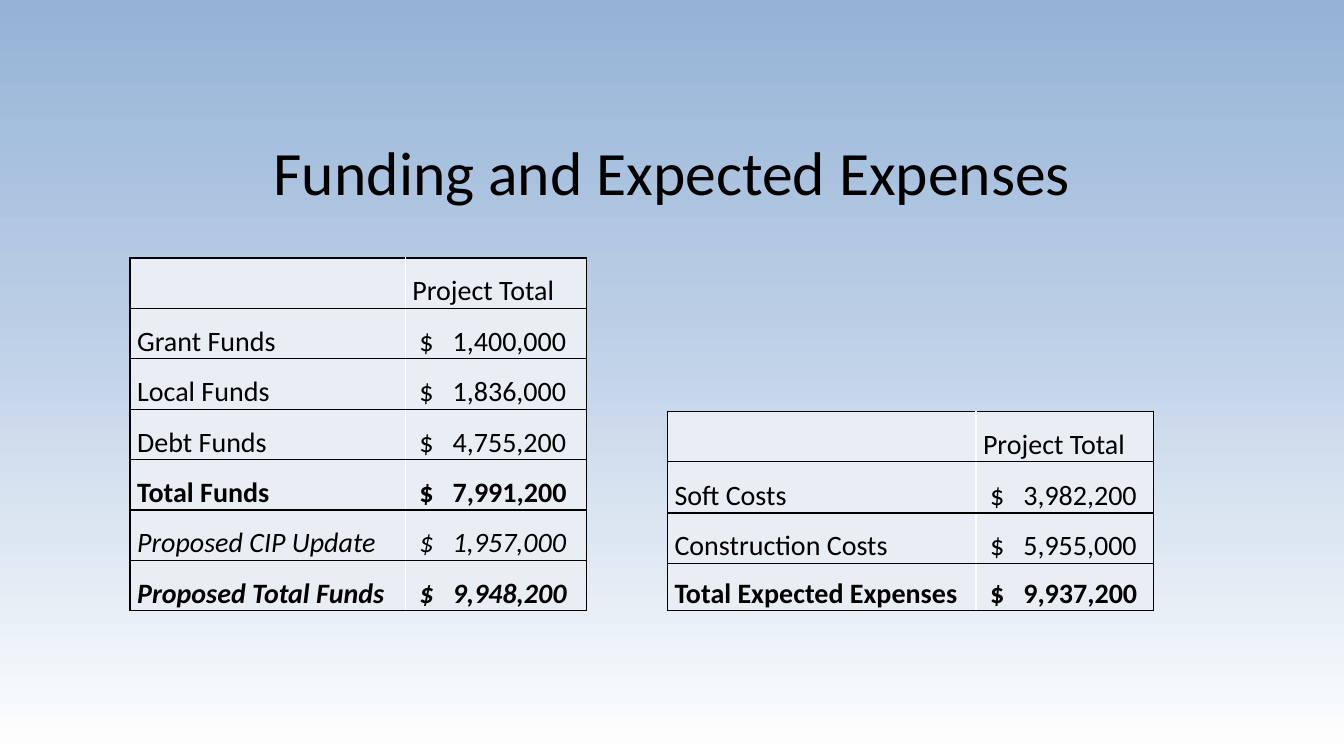
from dataclasses import dataclass

from lxml import etree
from pptx import Presentation
from pptx.dml.color import RGBColor
from pptx.enum.text import MSO_ANCHOR, PP_ALIGN
from pptx.oxml.ns import qn
from pptx.util import Inches, Pt

MIDDLE, BOTTOM = MSO_ANCHOR.MIDDLE, MSO_ANCHOR.BOTTOM
CENTER = PP_ALIGN.CENTER
FONT = "Calibri"
COLORS = {"text": "000000", "outline": "000000", "divider": "FFFFFF", "cell": "E9EDF4"}
SKY = [(0, "95B3D7"), (40, "B9CDE5"), (70, "DCE6F2"), (100, "FFFFFF")]


@dataclass(frozen=True)
class BudgetRow:
    label: str
    amount: str
    height: float = 0.5
    bold: bool = False
    italic: bool = False


@dataclass(frozen=True)
class BudgetTable:
    left: float
    top: float
    label_width: float
    amount_width: float
    rows: tuple[BudgetRow, ...]


HEADER = BudgetRow("", "Project Total")
FUNDING = BudgetTable(1.29, 2.56, 2.73, 1.8, (
    HEADER,
    BudgetRow("Grant Funds", "1,400,000"),
    BudgetRow("Local Funds", "1,836,000"),
    BudgetRow("Debt Funds", "4,755,200"),
    BudgetRow("Total Funds", "7,991,200", bold=True),
    BudgetRow("Proposed CIP Update", "1,957,000", italic=True),
    BudgetRow("Proposed Total Funds", "9,948,200", bold=True, italic=True),
))
EXPENSES = BudgetTable(6.62, 4.08, 3.06, 1.76, (
    HEADER,
    BudgetRow("Soft Costs", "3,982,200", height=0.51),
    BudgetRow("Construction Costs", "5,955,000"),
    BudgetRow("Total Expected Expenses", "9,937,200", height=0.47, bold=True),
))


def paint_background(slide) -> None:
    fill = slide.background.fill
    fill.gradient()
    fill.gradient_angle = 270
    stops = next(slide.element.iter(qn("a:gsLst")))
    for stop in list(stops):
        stops.remove(stop)
    for percent, color in SKY:
        stop = etree.SubElement(stops, qn("a:gs"), pos=str(percent * 1000))
        etree.SubElement(stop, qn("a:srgbClr"), val=color)


def set_font(paragraph, size: int, bold: bool = False, italic: bool = False) -> None:
    font = paragraph.font
    font.name, font.size, font.bold, font.italic = FONT, Pt(size), bold, italic
    font.color.rgb = RGBColor.from_string(COLORS["text"])


def add_title(slide, title: str) -> None:
    box = slide.shapes.add_textbox(Inches(0.67), Inches(1.07), Inches(12), Inches(1.25))
    frame = box.text_frame
    frame.word_wrap = True
    frame.vertical_anchor = MIDDLE
    paragraph = frame.paragraphs[0]
    paragraph.text = title
    paragraph.alignment = CENTER
    set_font(paragraph, 44)


def add_borders(cell, divider_side: str) -> None:
    """Outline a cell, with the divider colour on the side between the columns."""
    properties = cell._tc.get_or_add_tcPr()
    for side in ("L", "R", "T", "B"):
        line = etree.SubElement(properties, qn(f"a:ln{side}"), w=str(Pt(1)))
        solid = etree.SubElement(line, qn("a:solidFill"))
        color = COLORS["divider" if side == divider_side else "outline"]
        etree.SubElement(solid, qn("a:srgbClr"), val=color)


def fill_cell(cell, text: str, indent: float, divider_side: str, row: BudgetRow) -> None:
    add_borders(cell, divider_side)
    cell.fill.solid()
    cell.fill.fore_color.rgb = RGBColor.from_string(COLORS["cell"])
    cell.vertical_anchor = BOTTOM
    cell.margin_left = Inches(indent)
    cell.margin_top = cell.margin_right = Inches(0.01)
    cell.margin_bottom = 0
    paragraph = cell.text_frame.paragraphs[0]
    paragraph.text = text
    if "\t" in text:
        tabs = etree.SubElement(paragraph._p.get_or_add_pPr(), qn("a:tabLst"))
        etree.SubElement(tabs, qn("a:tab"), pos=str(Inches(0.33)), algn="l")
    set_font(paragraph, 20, row.bold, row.italic)


def add_budget(slide, budget: BudgetTable) -> None:
    widths = (budget.label_width, budget.amount_width)
    height = sum(row.height for row in budget.rows)
    table = slide.shapes.add_table(
        len(budget.rows), len(widths), Inches(budget.left), Inches(budget.top),
        Inches(sum(widths)), Inches(height)).table
    table.first_row = table.horz_banding = False
    for column, width in zip(table.columns, widths):
        column.width = Inches(width)
    for index, row in enumerate(budget.rows):
        table.rows[index].height = Inches(row.height)
        is_header = row is HEADER
        amount = row.amount if is_header else f"$\t{row.amount}"
        fill_cell(table.cell(index, 0), row.label, 0.07, "R", row)
        fill_cell(table.cell(index, 1), amount, 0.07 if is_header else 0.14, "L", row)


def main() -> None:
    deck = Presentation()
    deck.slide_width, deck.slide_height = Inches(13.33), Inches(7.5)
    slide = deck.slides.add_slide(deck.slide_layouts[6])
    paint_background(slide)
    add_title(slide, "Funding and Expected Expenses")
    for budget in (FUNDING, EXPENSES):
        add_budget(slide, budget)
    deck.save("out.pptx")


if __name__ == "__main__":
    main()
